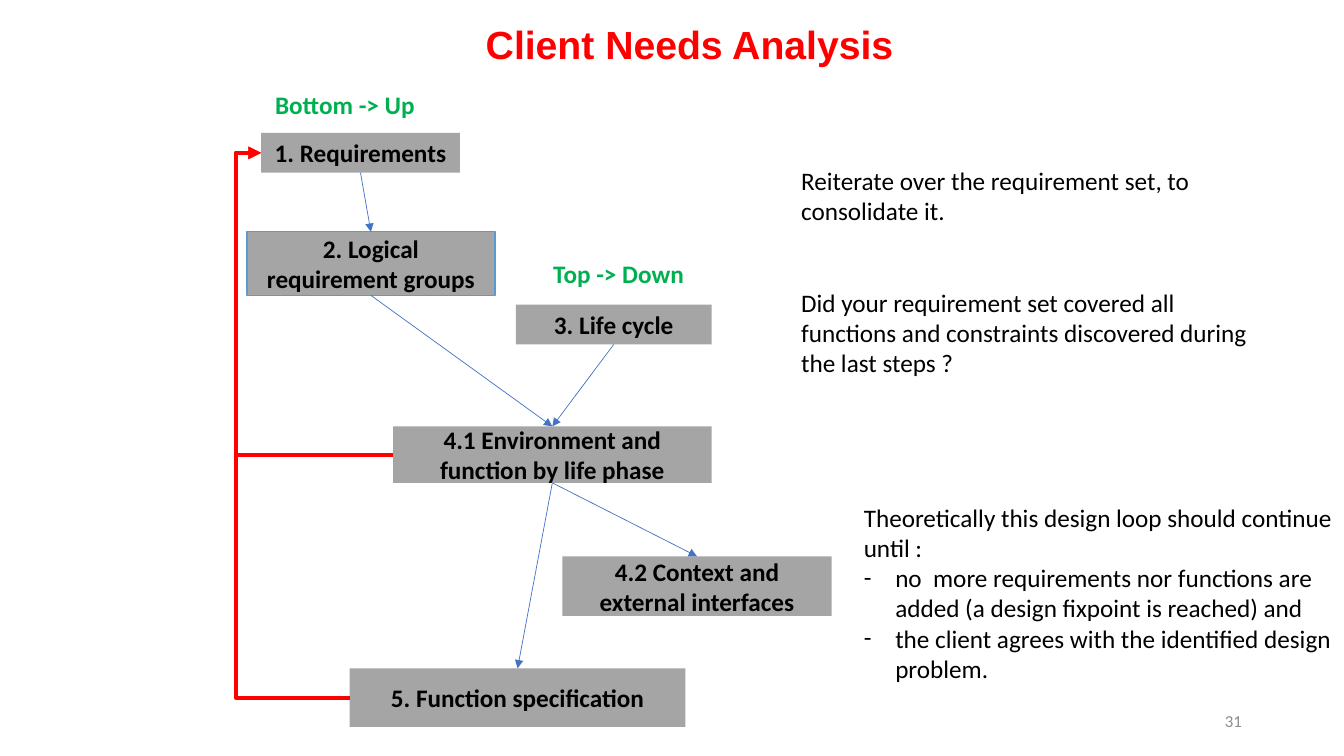
from lxml.etree import SubElement
from pptx import Presentation
from pptx.dml.color import RGBColor
from pptx.enum.shapes import MSO_CONNECTOR as Connector, MSO_SHAPE as Shape
from pptx.enum.text import MSO_ANCHOR as Anchor, MSO_AUTO_SIZE as AutoSize, PP_ALIGN as Align
from pptx.oxml.ns import qn
from pptx.util import Pt

COLORS = {
    "title": "FF0000",
    "loop": "FF0000",
    "direction": "00B050",
    "box": "A5A5A5",
    "box_line": "5B9BD5",
    "arrow": "4472C4",
    "text": "000000",
    "number": "8C8C8C",
}
TOP, LEFT, BOTTOM = 0, 1, 2
SPINE_X = Pt(168.7)


def write(shape, lines, color="text", size=18, bold=False, align=Align.LEFT,
          anchor=Anchor.TOP, font="Calibri"):
    frame = shape.text_frame
    frame.word_wrap = True
    frame.auto_size = AutoSize.NONE
    frame.vertical_anchor = anchor
    frame.text = "\n".join(lines)
    for paragraph in frame.paragraphs:
        paragraph.alignment = align
        paragraph.space_before = Pt(0)
        for run in paragraph.runs:
            run.font.name = font
            run.font.size = Pt(size)
            run.font.bold = bold
            run.font.color.rgb = RGBColor.from_string(COLORS[color])
    return frame


def connect(kind, source, source_site, target, target_site, color, width):
    connector = slide.shapes.add_connector(kind, 0, 0, 0, 0)
    connector.begin_connect(source, source_site)
    connector.end_connect(target, target_site)
    connector.line.color.rgb = RGBColor.from_string(COLORS[color])
    connector.line.width = Pt(width)
    SubElement(connector.line._get_or_add_ln(), qn("a:tailEnd"), type="triangle")
    SubElement(connector._element.spPr, qn("a:effectLst"))
    return connector


presentation = Presentation()
presentation.slide_width = Pt(960)
presentation.slide_height = Pt(540)
slide = presentation.slides.add_slide(presentation.slide_layouts[1])

title = slide.shapes.title
title.left, title.top, title.width, title.height = Pt(155.5), Pt(0.7), Pt(674), Pt(44)
title_frame = write(title, ["Client Needs Analysis"], "title", 28, True,
                    Align.CENTER, Anchor.MIDDLE, "Arial")
title_frame.paragraphs[0].line_spacing = 1.5

steps = {
    "requirements": ("1. Requirements", 186.5, 95, 142, 28.4),
    "groups": ("2. Logical requirement groups", 176.4, 165.6, 177.1, 45.4),
    "life_cycle": ("3. Life cycle", 368.6, 217.6, 139.7, 28.4),
    "environment": ("4.1 Environment and function by life phase", 280.8, 304.6, 227.5, 40.3),
    "context": ("4.2 Context and external interfaces", 401.8, 397.4, 192.2, 42.5),
    "specification": ("5. Function specification", 249.8, 477.4, 239.8, 41.8),
}
boxes = {}
for name, (label, *place) in steps.items():
    box = slide.shapes.add_shape(Shape.RECTANGLE, *map(Pt, place))
    box.shadow.inherit = False
    box.fill.solid()
    box.fill.fore_color.rgb = RGBColor.from_string(COLORS["box"])
    box.line.fill.background()
    write(box, [label], bold=True, align=Align.CENTER, anchor=Anchor.MIDDLE)
    boxes[name] = box
boxes["groups"].line.color.rgb = RGBColor.from_string(COLORS["box_line"])
boxes["groups"].line.width = Pt(1)

for source, target in [
    ("requirements", "groups"),
    ("groups", "environment"),
    ("life_cycle", "environment"),
    ("environment", "context"),
    ("environment", "specification"),
]:
    connect(Connector.STRAIGHT, boxes[source], BOTTOM, boxes[target], TOP, "arrow", 0.5)

for source in ("environment", "specification"):
    loop = connect(Connector.ELBOW, boxes[source], LEFT, boxes["requirements"], LEFT, "loop", 3)
    bend = (loop.begin_x - SPINE_X) / (loop.begin_x - loop.end_x)
    properties = loop._element.spPr
    transform = properties.find(qn("a:xfrm"))
    for flip in ("flipH", "flipV"):
        transform.attrib.pop(flip, None)
    transform.set("rot", "10800000")
    geometry = properties.find(qn("a:prstGeom"))
    adjustments = geometry.find(qn("a:avLst"))
    if adjustments is None:
        adjustments = SubElement(geometry, qn("a:avLst"))
    SubElement(adjustments, qn("a:gd"), name="adj1", fmla=f"val {round(bend * 100000)}")

for label, left, top in [("Bottom -> Up", 189.4, 60.5), ("Top -> Down", 388.1, 180.7)]:
    direction = slide.shapes.add_textbox(Pt(left), Pt(top), Pt(143.3), Pt(29))
    write(direction, [label], "direction", bold=True)

review = slide.shapes.add_textbox(Pt(565.2), Pt(114.5), Pt(348.5), Pt(160))
review_frame = write(review, [
    "Reiterate over the requirement set, to consolidate it.",
    "Did your requirement set covered all functions and constraints discovered during the last steps ?",
])
review_frame.paragraphs[1].space_before = Pt(43.9)

stop_rule = slide.placeholders[1]
stop_rule.left, stop_rule.top = Pt(609.8), Pt(355)
stop_rule.width, stop_rule.height = Pt(350.6), Pt(138.2)
stop_frame = write(stop_rule, [
    "Theoretically this design loop should continue until :",
    "no  more requirements nor functions are added (a design fixpoint is reached) and",
    "the client agrees with the identified design problem.",
])
for index, paragraph in enumerate(stop_frame.paragraphs):
    properties = paragraph._p.get_or_add_pPr()
    indent = Pt(22.5) if index else 0
    properties.set("marL", str(indent))
    properties.set("indent", str(-indent))
    if index:
        SubElement(properties, qn("a:buFont"), typeface="Calibri")
        SubElement(properties, qn("a:buChar"), char="-")
    else:
        SubElement(properties, qn("a:buNone"))

number = slide.shapes.add_textbox(Pt(678.2), Pt(500.5), Pt(216), Pt(28.8))
write(number, ["31"], "number", 12, align=Align.RIGHT, anchor=Anchor.MIDDLE)

presentation.save("out.pptx")
